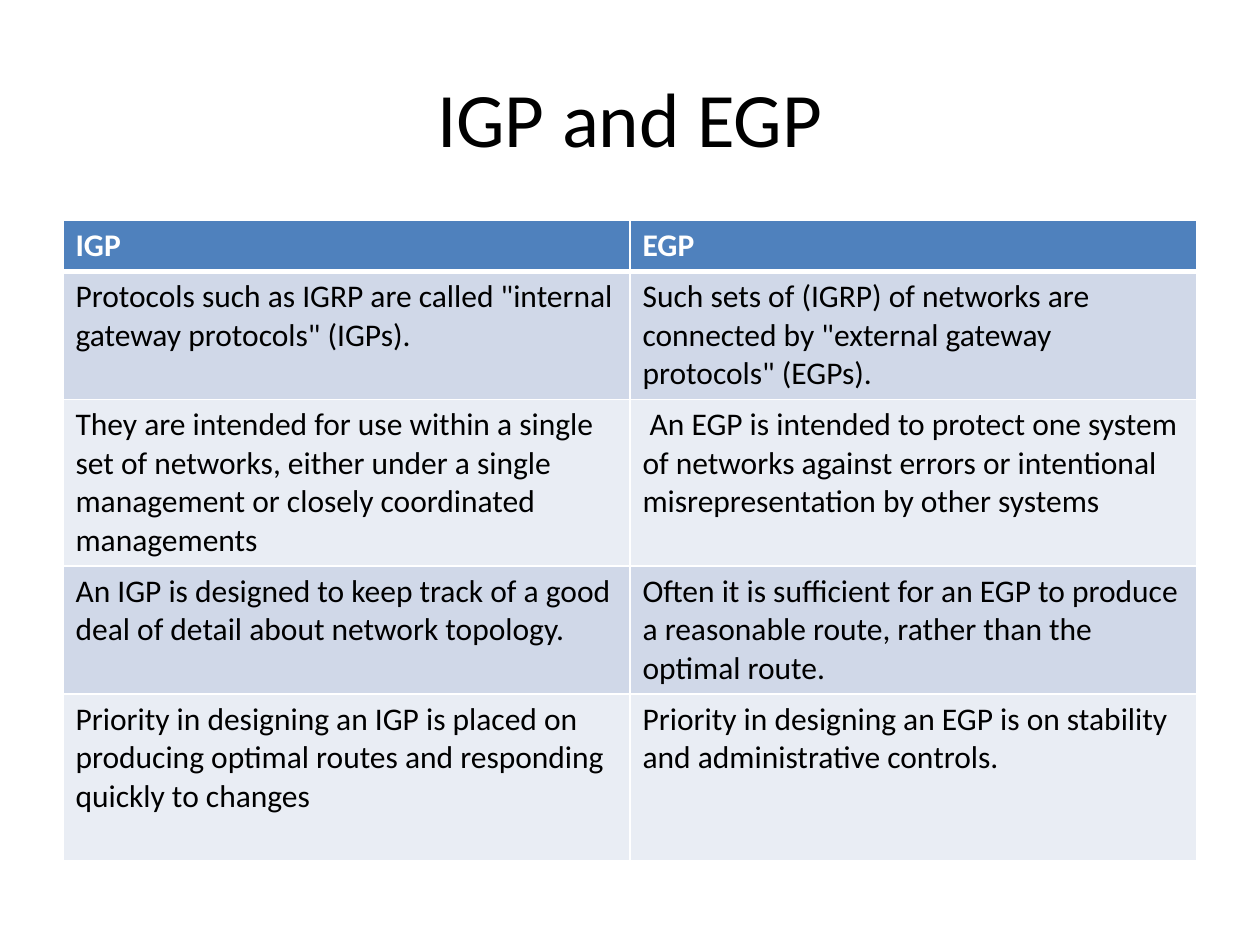
from lxml.etree import SubElement
from pptx import Presentation
from pptx.dml.color import RGBColor
from pptx.enum.text import MSO_ANCHOR, PP_ALIGN
from pptx.oxml.ns import qn
from pptx.util import Inches, Pt

FONT = "Calibri"
WHITE, BLACK = "FFFFFF", "000000"
HEADER_FILL = "4F81BD"
BAND_FILLS = ["D0D8E8", "E9EDF4"]
ROW_HEIGHTS = [0.4, 1.01, 1.32, 1.01, 1.32]
ROWS = [
    ("IGP", "EGP"),
    ('Protocols such as IGRP are called "internal gateway protocols" (IGPs).',
     'Such sets of (IGRP) of networks are connected by "external gateway '
     'protocols" (EGPs).'),
    ("They are intended for use within a single set of networks, either under "
     "a single management or closely coordinated managements",
     " An EGP is intended to protect one system of networks against errors or "
     "intentional misrepresentation by other systems"),
    ("An IGP is designed to keep track of a good deal of detail about network "
     "topology.",
     "Often it is sufficient for an EGP to produce a reasonable route, rather "
     "than the optimal route."),
    ("Priority in designing an IGP is placed on producing optimal routes and "
     "responding quickly to changes",
     "Priority in designing an EGP is on stability and administrative "
     "controls."),
]


def rgb(color):
    return RGBColor.from_string(color)


def add_run(p, text, size, color, bold=False):
    r = p.add_run()
    r.text = text
    r.font.name = FONT
    r.font.size = Pt(size)
    r.font.bold = bold
    r.font.color.rgb = rgb(color)


def set_borders(cell, color, **widths):
    """Draw cell borders; widths in points are keyed L, R, T, B in that order."""
    tc_pr = cell._tc.get_or_add_tcPr()
    for side, width in widths.items():
        ln = SubElement(tc_pr, qn(f"a:ln{side}"), w=str(Pt(width)))
        fill = SubElement(ln, qn("a:solidFill"))
        SubElement(fill, qn("a:srgbClr"), val=color)


def place_title(slide, text, left, top, width, height):
    sp = slide.shapes.title
    sp.left, sp.top = Inches(left), Inches(top)
    sp.width, sp.height = Inches(width), Inches(height)
    tf = sp.text_frame
    tf.vertical_anchor = MSO_ANCHOR.MIDDLE
    p = tf.paragraphs[0]
    p.alignment = PP_ALIGN.CENTER
    add_run(p, text, 44, BLACK)


def add_comparison_table(slide, rows, left, top, width):
    frame = slide.shapes.add_table(
        len(rows), len(rows[0]), Inches(left), Inches(top),
        Inches(width), Inches(sum(ROW_HEIGHTS)))
    table = frame.table
    for i, texts in enumerate(rows):
        table.rows[i].height = Inches(ROW_HEIGHTS[i])
        header = i == 0
        fill = HEADER_FILL if header else BAND_FILLS[(i - 1) % 2]
        for j, text in enumerate(texts):
            cell = table.cell(i, j)
            set_borders(cell, WHITE, L=1, R=1, T=3 if i == 1 else 1,
                        B=3 if header else 1)
            cell.fill.solid()
            cell.fill.fore_color.rgb = rgb(fill)
            add_run(cell.text_frame.paragraphs[0], text, 18,
                    WHITE if header else BLACK, header)


def main():
    prs = Presentation()
    prs.slide_width, prs.slide_height = Inches(10), Inches(7.5)
    slide = prs.slides.add_slide(prs.slide_layouts[5])
    place_title(slide, "IGP and EGP", 0.5, 0.3, 9, 1.25)
    add_comparison_table(slide, ROWS, 0.5, 1.75, 9)
    prs.save("out.pptx")


if __name__ == "__main__":
    main()
